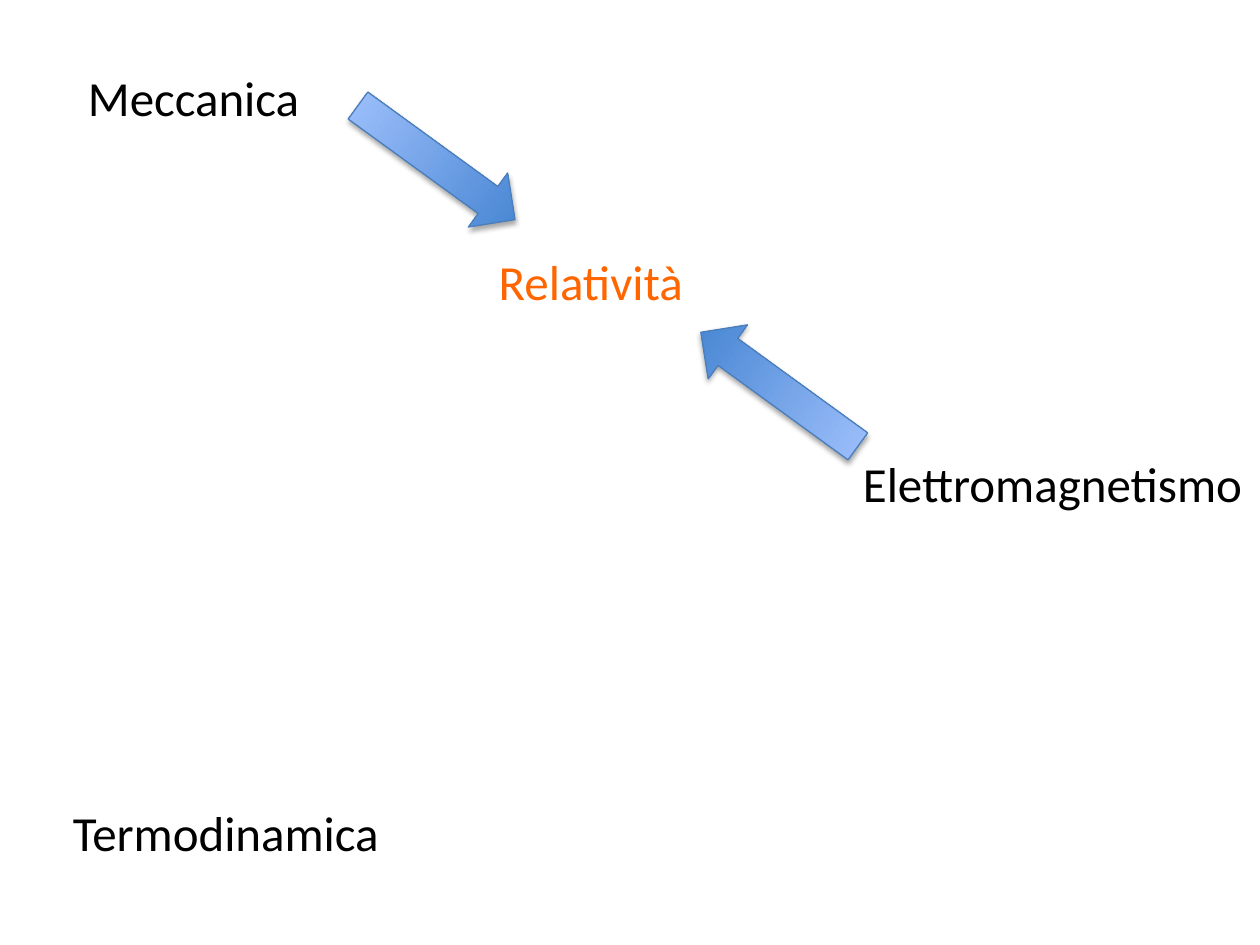
from lxml.etree import SubElement
from pptx import Presentation
from pptx.dml.color import RGBColor as Rgb
from pptx.enum.shapes import MSO_SHAPE as Shape
from pptx.enum.text import MSO_AUTO_SIZE as AutoSize
from pptx.oxml.ns import qn
from pptx.util import Inches, Pt

WIDTH, HEIGHT = Inches(10), Inches(7.5)
COLORS = {
    "text": "000000",
    "accent": "FF6600",
    "arrow_head": "3F80CE",
    "arrow_tail": "A4C4FF",
    "arrow_line": "4B7EBC",
    "shadow": "000000",
}
LABEL_HEIGHT = 0.57 / 7.5
ARROW_SIZE = (0.053, 1.54 / 7.5)


def color(name):
    return Rgb.from_string(COLORS[name])


def place(left, top, width, height):
    """Turn shares of the slide into lengths."""
    return (int(WIDTH * left), int(HEIGHT * top),
            int(WIDTH * width), int(HEIGHT * height))


def add_label(page, words, left, top, width, color_name="text"):
    box = page.shapes.add_textbox(*place(left, top, width, LABEL_HEIGHT))
    frame = box.text_frame
    frame.word_wrap = False
    frame.auto_size = AutoSize.SHAPE_TO_FIT_TEXT
    span = frame.paragraphs[0].add_run()
    span.text = words
    span.font.name = "Calibri"
    span.font.size = Pt(28)
    span.font.color.rgb = color(color_name)


def add_soft_shadow(shape):
    shape.shadow.inherit = False
    effects = shape._element.spPr.find(qn("a:effectLst"))
    shadow = SubElement(effects, qn("a:outerShdw"), blurRad=str(Pt(3.1)),
                        dist=str(Pt(1.8)), dir="5400000", rotWithShape="0")
    tint = SubElement(shadow, qn("a:srgbClr"), val=COLORS["shadow"])
    SubElement(tint, qn("a:alpha"), val="35000")


def add_arrow(page, left, top, rotation):
    arrow = page.shapes.add_shape(Shape.DOWN_ARROW, *place(left, top, *ARROW_SIZE))
    arrow.rotation = rotation
    # Gradient runs from the head up to the tail
    arrow.fill.gradient()
    arrow.fill.gradient_angle = 90
    for stop, name in zip(arrow.fill.gradient_stops, ("arrow_head", "arrow_tail")):
        stop.color.rgb = color(name)
    arrow.line.color.rgb = color("arrow_line")
    arrow.line.width = Pt(0.75)
    add_soft_shadow(arrow)


def main():
    deck = Presentation()
    deck.slide_width, deck.slide_height = WIDTH, HEIGHT
    page = deck.slides.add_slide(deck.slide_layouts[6])

    # Branches of physics
    add_label(page, "Meccanica", 0.06, 0.49 / 7.5, 0.19)
    add_label(page, "Termodinamica", 0.048, 6.32 / 7.5, 0.27)
    add_label(page, "Elettromagnetismo", 0.675, 3.55 / 7.5, 0.325)

    # Theory where two of them meet
    add_label(page, "Relatività", 0.386, 0.26, 0.169, "accent")

    # Opposite arrows pointing at the theory
    add_arrow(page, 0.32, 0.52 / 7.5, 306)
    add_arrow(page, 0.592, 2.32 / 7.5, 126)

    deck.save("out.pptx")


if __name__ == "__main__":
    main()
